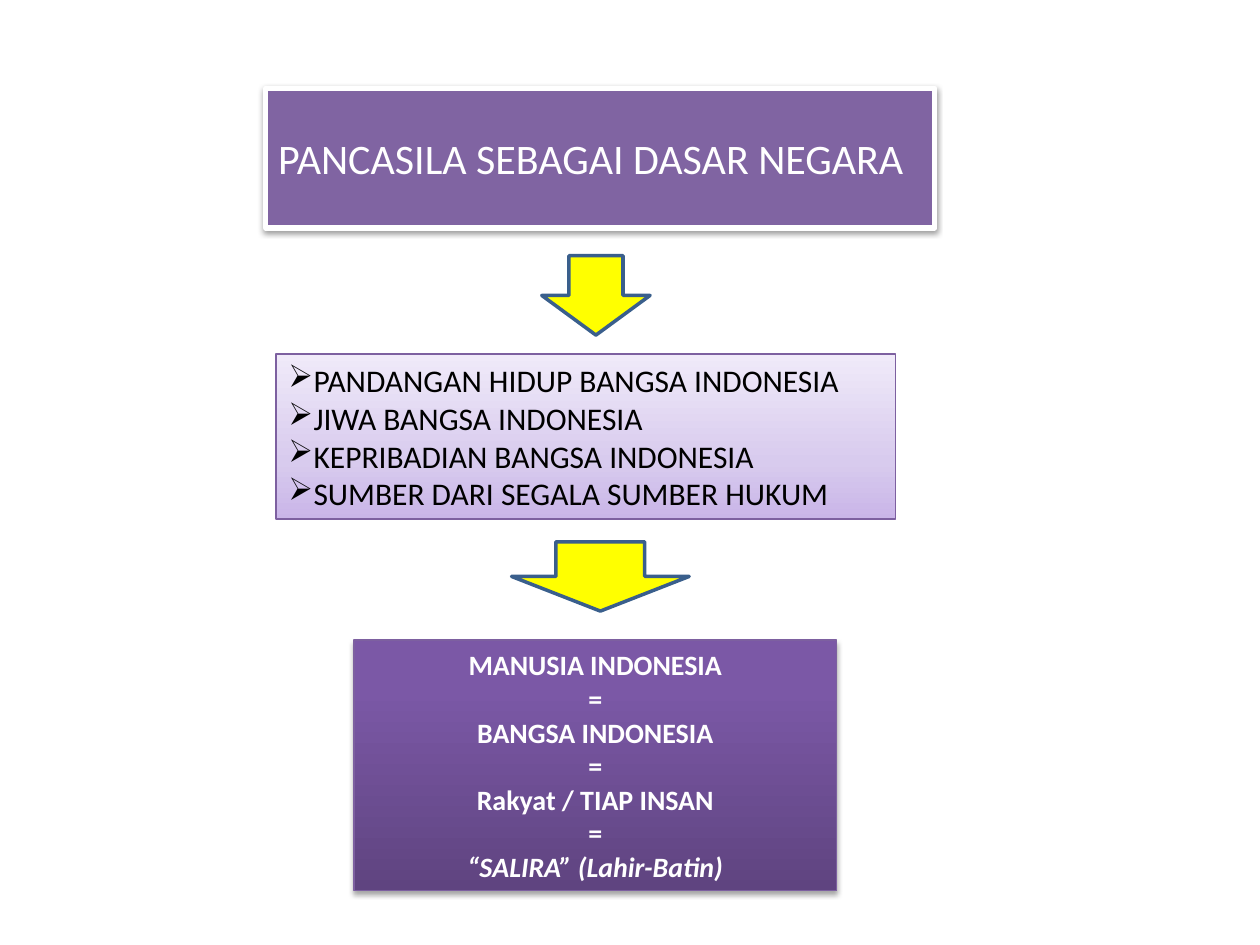
import dataclasses

import lxml.etree
import pptx
import pptx.dml.color
import pptx.enum.shapes
import pptx.enum.text
import pptx.oxml.ns
import pptx.util

Inches = pptx.util.Inches
Pt = pptx.util.Pt
qn = pptx.oxml.ns.qn
PP_ALIGN = pptx.enum.text.PP_ALIGN
SHAPE = pptx.enum.shapes.MSO_SHAPE


@dataclasses.dataclass(frozen=True)
class Theme:
    font: str = "Calibri"
    white: str = "FFFFFF"
    black: str = "000000"
    purple: str = "8064A2"
    border: str = "7D60A0"
    arrow: str = "FFFF00"
    arrow_line: str = "3A5F8C"
    light: tuple = ((0, "C9B5E8"), (35, "D8CBEE"), (100, "F0EAF9"))
    dark: tuple = ((0, "5F4480"), (80, "7B58A6"), (100, "7C57A8"))
    title_size: int = 24
    list_size: int = 18
    people_size: int = 16


THEME = Theme()


def rgb(color):
    return pptx.dml.color.RGBColor.from_string(color)


def sub(parent, tag, **attrs):
    return lxml.etree.SubElement(parent, qn(tag), attrs)


def set_gradient(fill, stops):
    fill.gradient()
    fill.gradient_angle = 90
    gs_list = fill._xPr.find(".//" + qn("a:gsLst"))
    for gs in list(gs_list):
        gs_list.remove(gs)
    for pos, color in stops:
        gs = sub(gs_list, "a:gs", pos=str(pos * 1000))
        sub(gs, "a:srgbClr", val=color)


def add_shadow(sp, alpha, dist):
    effects = sp._element.spPr.find(qn("a:effectLst"))
    shadow = sub(effects, "a:outerShdw", blurRad=str(Pt(3.1)),
                 dist=str(Pt(dist)), dir="5400000", rotWithShape="0")
    color = sub(shadow, "a:srgbClr", val=THEME.black)
    sub(color, "a:alpha", val=str(alpha * 1000))


def add_block(s, kind, box, fill, line, width):
    sp = s.shapes.add_shape(kind, *(Inches(v) for v in box))
    sp.shadow.inherit = False
    if isinstance(fill, str):
        sp.fill.solid()
        sp.fill.fore_color.rgb = rgb(fill)
    else:
        set_gradient(sp.fill, fill)
    sp.line.color.rgb = rgb(line)
    sp.line.width = Pt(width)
    return sp


def add_arrow(s, box):
    add_block(s, SHAPE.DOWN_ARROW, box, THEME.arrow, THEME.arrow_line, 2)


def write(sp, lines, size, color, align=PP_ALIGN.LEFT, bold=False):
    tf = sp.text_frame
    tf.word_wrap = True
    tf.vertical_anchor = pptx.enum.text.MSO_ANCHOR.MIDDLE
    tf.text = "\n".join(lines)
    for p in tf.paragraphs:
        p.alignment = align
        for r in p.runs:
            r.font.name = THEME.font
            r.font.size = Pt(size)
            r.font.bold = bold
            r.font.color.rgb = rgb(color)
    return tf


def add_bullets(tf):
    for p in tf.paragraphs:
        pPr = p._p.get_or_add_pPr()
        pPr.set("marL", str(Inches(0.2)))
        pPr.set("indent", str(Inches(-0.2)))
        sub(pPr, "a:buChar", char="➢")


def main():
    prs = pptx.Presentation()
    prs.slide_width, prs.slide_height = Inches(10), Inches(7.5)
    s = prs.slides.add_slide(prs.slide_layouts[6])

    title = add_block(s, SHAPE.RECTANGLE, (2.11, 0.7, 5.31, 1.11),
                      THEME.purple, THEME.white, 3)
    add_shadow(title, 38, 1.6)
    write(title, ["PANCASILA SEBAGAI DASAR NEGARA"], THEME.title_size, THEME.white)

    add_arrow(s, (4.3, 2.03, 0.86, 0.63))

    roles = add_block(s, SHAPE.RECTANGLE, (2.19, 2.81, 4.92, 1.31),
                      THEME.light, THEME.border, 0.75)
    add_bullets(write(roles, [
        "PANDANGAN HIDUP BANGSA INDONESIA",
        "JIWA BANGSA INDONESIA",
        "KEPRIBADIAN BANGSA INDONESIA",
        "SUMBER DARI SEGALA SUMBER HUKUM",
    ], THEME.list_size, THEME.black))

    add_arrow(s, (4.06, 4.3, 1.41, 0.55))

    people = add_block(s, SHAPE.RECTANGLE, (2.81, 5.08, 3.83, 1.99),
                       THEME.dark, THEME.border, 0.75)
    add_shadow(people, 35, 1.8)
    tf = write(people, [
        "MANUSIA INDONESIA", "=", "BANGSA INDONESIA", "=",
        "Rakyat / TIAP INSAN", "=", "“SALIRA” (Lahir-Batin)",
    ], THEME.people_size, THEME.white, PP_ALIGN.CENTER, True)
    tf.paragraphs[-1].runs[0].font.italic = True

    prs.save("out.pptx")


if __name__ == "__main__":
    main()
